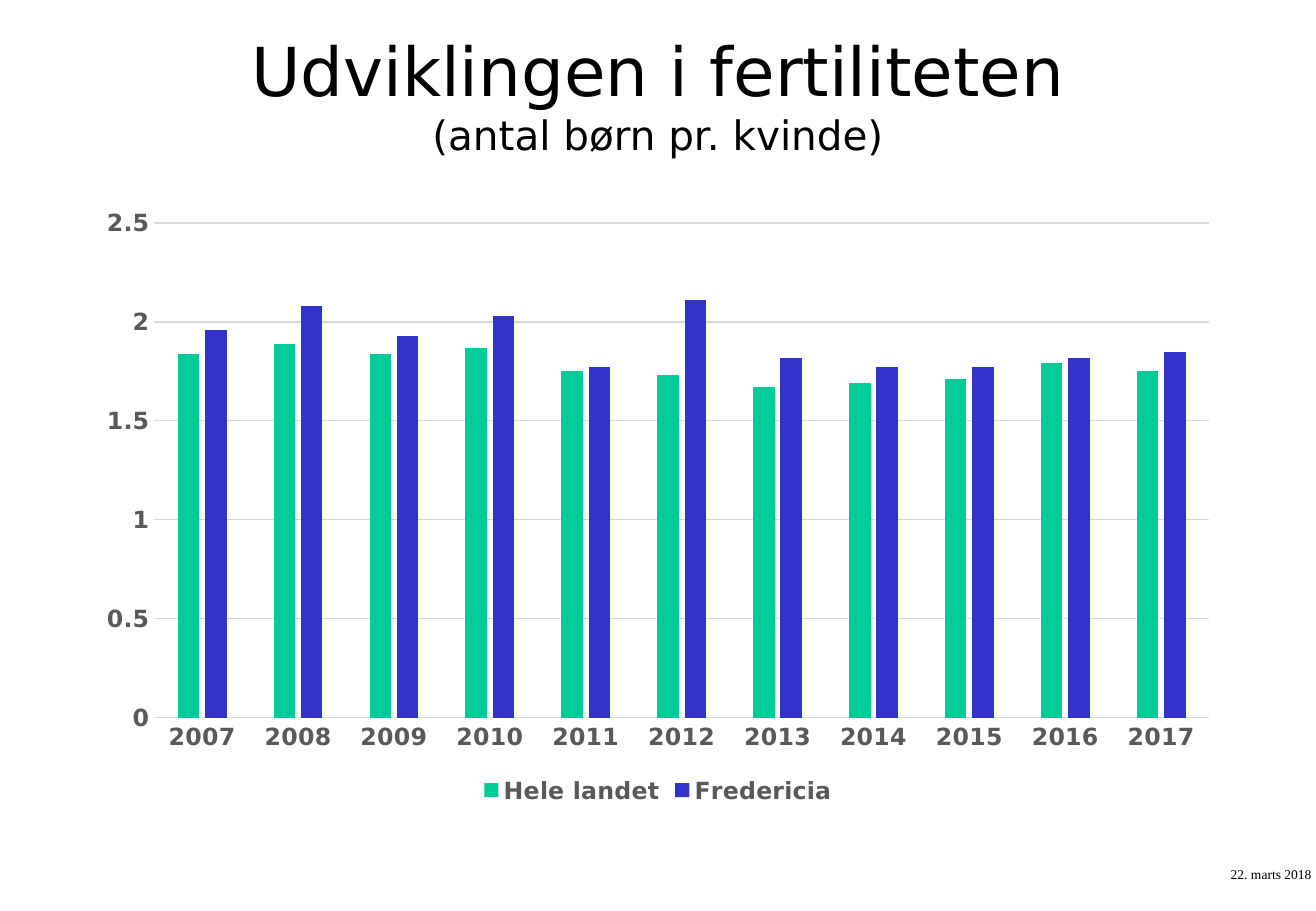
from dataclasses import dataclass

from pptx import Presentation
from pptx.chart.data import CategoryChartData
from pptx.dml.color import RGBColor
from pptx.enum.chart import XL_CHART_TYPE, XL_LEGEND_POSITION, XL_TICK_MARK
from pptx.enum.text import MSO_ANCHOR, PP_ALIGN
from pptx.slide import Slide
from pptx.text.text import Font
from pptx.util import Inches, Pt

SLIDE_WIDTH, SLIDE_HEIGHT = Inches(10.83), Inches(7.5)
COLORS = {
    "text": "000000",
    "label": "595959",
    "grid": "D9D9D9",
    "country": "00CC99",
    "town": "3333CC",
}
SANS, SERIF = "DejaVu Sans", "Times New Roman"
LABEL_FORMAT = {"name": SANS, "size": Pt(14), "bold": True}


@dataclass(frozen=True)
class Area:
    """A rectangle in percent of the slide's width and height."""
    left: float
    top: float
    width: float
    height: float

    def lengths(self) -> tuple[int, int, int, int]:
        return (
            int(SLIDE_WIDTH * self.left / 100),
            int(SLIDE_HEIGHT * self.top / 100),
            int(SLIDE_WIDTH * self.width / 100),
            int(SLIDE_HEIGHT * self.height / 100),
        )


@dataclass(frozen=True)
class TextLine:
    text: str
    size: int


@dataclass(frozen=True)
class TextBlock:
    area: Area
    lines: tuple[TextLine, ...]
    font_name: str
    alignment: PP_ALIGN
    anchor: MSO_ANCHOR


@dataclass(frozen=True)
class FertilitySeries:
    name: str
    color: str
    values: tuple[float, ...]


TEXT_BLOCKS = (
    TextBlock(
        Area(92.61, 94.4, 14.13, 3.07),
        (TextLine("22. marts 2018", 8),),
        SERIF, PP_ALIGN.LEFT, MSO_ANCHOR.TOP,
    ),
    TextBlock(
        Area(7.48, 3.07, 85.04, 14.53),
        (TextLine("Udviklingen i fertiliteten", 40),
         TextLine("(antal børn pr. kvinde)", 24)),
        SANS, PP_ALIGN.CENTER, MSO_ANCHOR.MIDDLE,
    ),
)
CHART_AREA = Area(6.37, 21.6, 87.26, 67.2)
YEARS = [str(year) for year in range(2007, 2018)]
FERTILITY = (
    FertilitySeries("Hele landet", "country", (
        1.84, 1.89, 1.84, 1.87, 1.75, 1.73, 1.67, 1.69, 1.71, 1.79, 1.75)),
    FertilitySeries("Fredericia", "town", (
        1.96, 2.08, 1.93, 2.03, 1.77, 2.11, 1.82, 1.77, 1.77, 1.82, 1.85)),
)


def color(name: str) -> RGBColor:
    return RGBColor.from_string(COLORS[name])


def set_format(target: object, values: dict) -> None:
    for attribute, value in values.items():
        setattr(target, attribute, value)


def format_font(font: Font, color_name: str, values: dict) -> None:
    set_format(font, values)
    font.color.rgb = color(color_name)


def add_text(slide: Slide, block: TextBlock) -> None:
    frame = slide.shapes.add_textbox(*block.area.lengths()).text_frame
    set_format(frame, {"word_wrap": True, "vertical_anchor": block.anchor})
    paragraph = frame.paragraphs[0]
    paragraph.alignment = block.alignment
    for index, line in enumerate(block.lines):
        if index:
            paragraph.add_line_break()
        run = paragraph.add_run()
        run.text = line.text
        format_font(run.font, "text",
                    {"name": block.font_name, "size": Pt(line.size)})


def add_fertility_chart(slide: Slide) -> None:
    data = CategoryChartData(number_format="General")
    data.categories = YEARS
    for series in FERTILITY:
        data.add_series(series.name, series.values)
    chart = slide.shapes.add_chart(
        XL_CHART_TYPE.COLUMN_CLUSTERED, *CHART_AREA.lengths(), data).chart
    set_format(chart, {"has_title": False, "has_legend": True})
    format_font(chart.font, "text", {"name": SANS, "size": Pt(10)})
    set_format(chart.legend, {"position": XL_LEGEND_POSITION.BOTTOM,
                              "include_in_layout": False})

    plot = chart.plots[0]
    set_format(plot, {"gap_width": 219, "overlap": -27,
                      "vary_by_categories": False})
    for column, series in zip(plot.series, FERTILITY):
        column.format.fill.solid()
        column.format.fill.fore_color.rgb = color(series.color)

    category_axis, value_axis = chart.category_axis, chart.value_axis
    for axis in (category_axis, value_axis):
        set_format(axis, {"major_tick_mark": XL_TICK_MARK.NONE,
                          "minor_tick_mark": XL_TICK_MARK.NONE})
    for font in (category_axis.tick_labels.font,
                 value_axis.tick_labels.font, chart.legend.font):
        format_font(font, "label", LABEL_FORMAT)
    set_format(value_axis, {"minimum_scale": 0, "maximum_scale": 2.5,
                            "major_unit": 0.5, "has_major_gridlines": True})
    value_axis.format.line.fill.background()
    for line in (category_axis.format.line,
                 value_axis.major_gridlines.format.line):
        line.width = Pt(0.75)
        line.color.rgb = color("grid")


def main() -> None:
    presentation = Presentation()
    set_format(presentation, {"slide_width": SLIDE_WIDTH,
                              "slide_height": SLIDE_HEIGHT})
    slide = presentation.slides.add_slide(presentation.slide_layouts[6])
    for block in TEXT_BLOCKS:
        add_text(slide, block)
    add_fertility_chart(slide)
    presentation.save("out.pptx")


if __name__ == "__main__":
    main()
